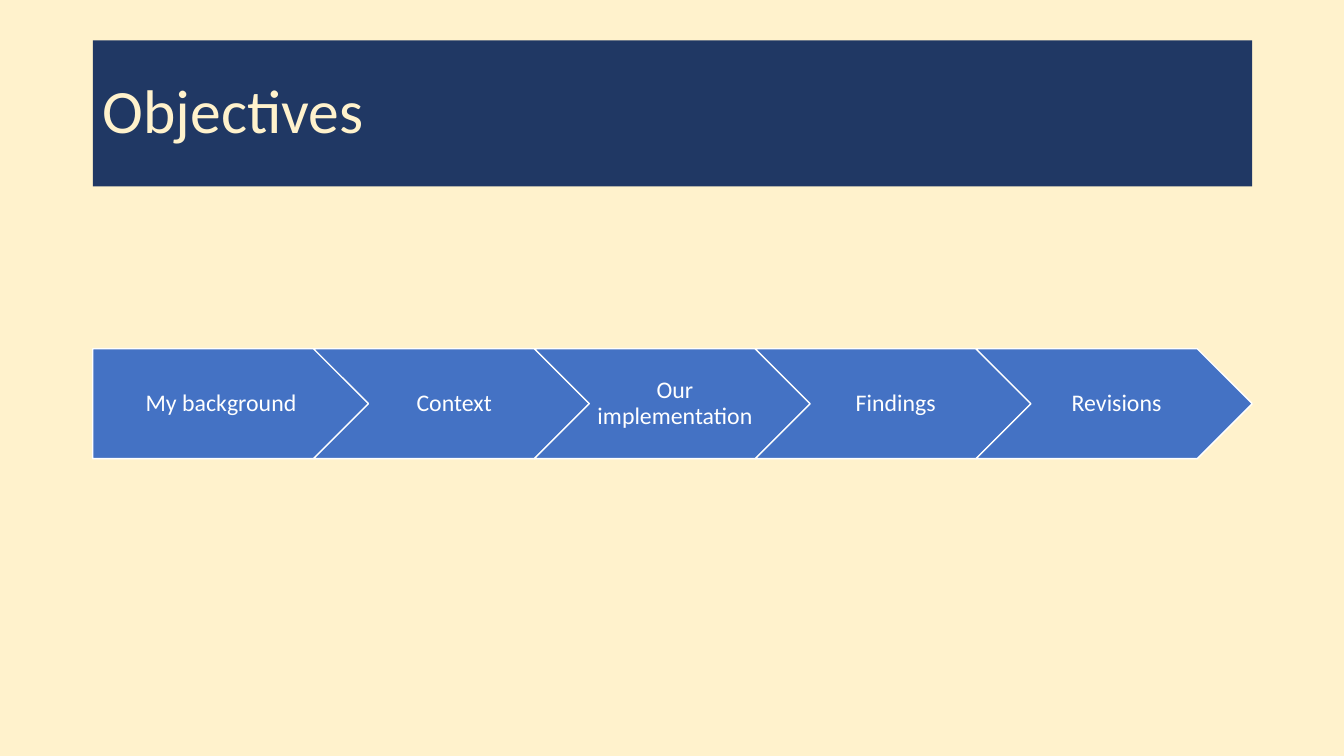
import pptx
import pptx.util
import pptx.dml.color
import pptx.enum.shapes
import pptx.enum.text
from pptx.util import Inches

CREAM, NAVY, BLUE, WHITE = "FFF2CC", "203864", "4472C4", "FFFFFF"
SHAPE = pptx.enum.shapes.MSO_SHAPE
ALIGN = pptx.enum.text.PP_ALIGN


def paint(fill, color):
    fill.solid()
    fill.fore_color.rgb = pptx.dml.color.RGBColor.from_string(color)


class Deck:
    font = "Calibri"

    def __init__(self):
        self.file = pptx.Presentation()
        self.file.slide_width = Inches(13.33)
        self.file.slide_height = Inches(7.5)
        self.slide = self.file.slides.add_slide(self.file.slide_layouts[5])
        paint(self.slide.background.fill, CREAM)

    def label(self, shape, text, size, color, align, pads):
        frame = shape.text_frame
        frame.text = text
        frame.word_wrap = True
        frame.auto_size = pptx.enum.text.MSO_AUTO_SIZE.NONE
        frame.vertical_anchor = pptx.enum.text.MSO_ANCHOR.MIDDLE
        frame.margin_left, frame.margin_right = map(Inches, pads)
        frame.margin_top = frame.margin_bottom = Inches(0.05)
        line = frame.paragraphs[0]
        line.alignment = align
        line.line_spacing = 0.9
        font = line.runs[0].font
        font.name = self.font
        font.size = pptx.util.Pt(size)
        paint(font.fill, color)

    def title(self, text, left, top, width, height):
        shape = self.slide.shapes.title
        shape.left, shape.top = Inches(left), Inches(top)
        shape.width, shape.height = Inches(width), Inches(height)
        paint(shape.fill, NAVY)
        self.label(shape, text, 44, CREAM, ALIGN.LEFT, (0.1, 0.1))

    def step(self, group, kind, text, left, pad):
        shape = group.shapes.add_shape(
            kind, Inches(left), Inches(3.46), Inches(2.74), Inches(1.09))
        shape.shadow.inherit = False
        paint(shape.fill, BLUE)
        paint(shape.line.fill, WHITE)
        shape.line.width = pptx.util.Pt(1)
        self.label(shape, text, 17, WHITE, ALIGN.CENTER, (pad, 0.02))

    def chain(self, names, left, pitch):
        group = self.slide.shapes.add_group_shape()
        for i, name in enumerate(names):
            kind, pad = (SHAPE.CHEVRON, 0.07) if i else (SHAPE.PENTAGON, 0.1)
            self.step(group, kind, name, left + i * pitch, pad)


def main():
    deck = Deck()
    # Title band
    deck.title("Objectives", 0.92, 0.4, 11.5, 1.45)
    # Row of steps
    deck.chain(["My background", "Context", "Our implementation",
                "Findings", "Revisions"], 0.92, 2.19)
    deck.file.save("out.pptx")


if __name__ == "__main__":
    main()
